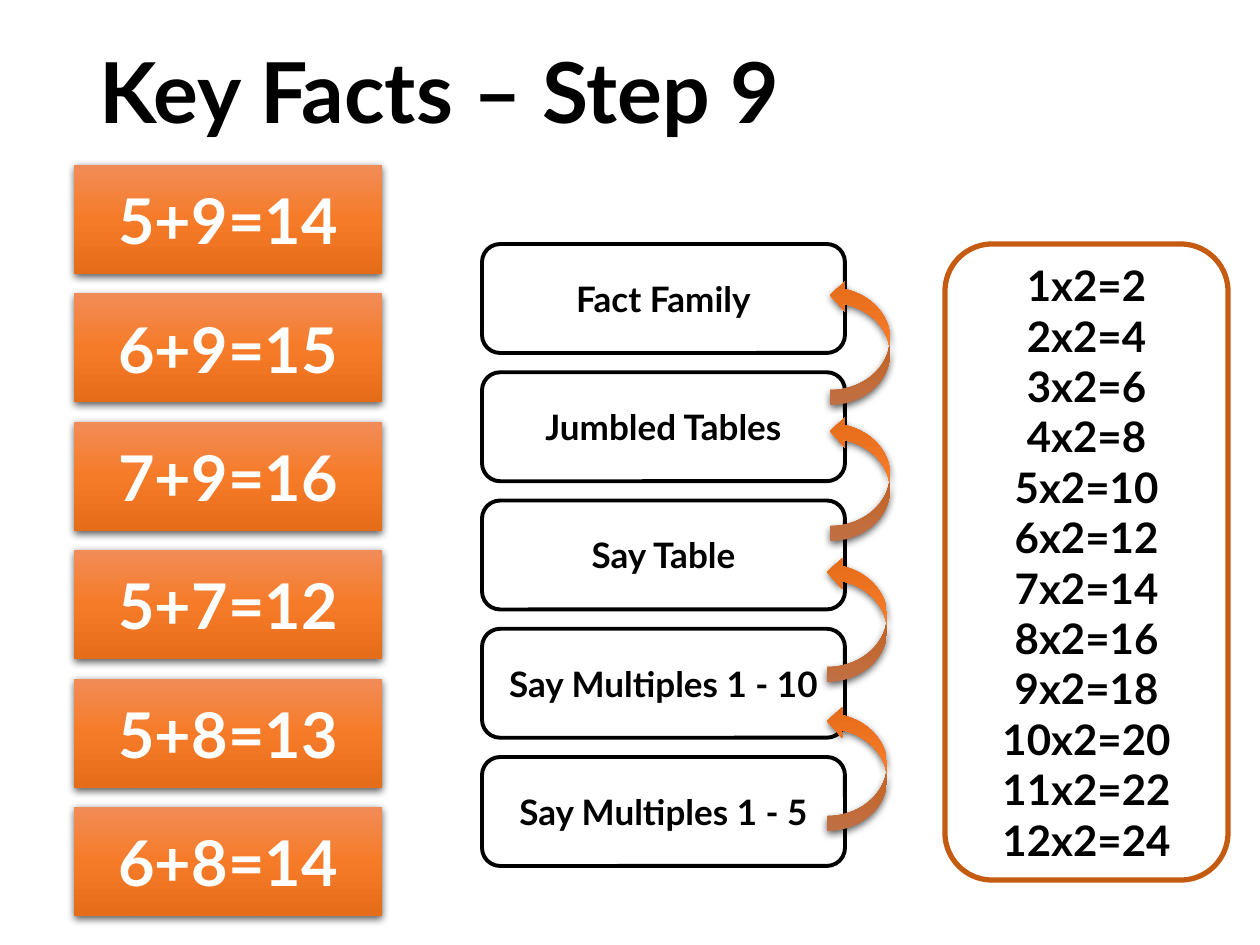
from copy import deepcopy

from lxml.etree import SubElement
from pptx import Presentation
from pptx.dml.color import RGBColor
from pptx.enum.shapes import MSO_SHAPE as Shape
from pptx.enum.text import MSO_ANCHOR as Anchor, PP_ALIGN as Align
from pptx.oxml.ns import qn
from pptx.util import Pt

EMU_PER_PX = 914400 / 126
FONT = "Lato"
BLACK, WHITE, BROWN = "000000", "FFFFFF", "C55A11"
ORANGES = ["F18C57", "F67B28", "E56C19"]
SUMS = ["5+9=14", "6+9=15", "7+9=16", "5+7=12", "5+8=13", "6+8=14"]
STEPS = ["Fact Family", "Jumbled Tables", "Say Table",
         "Say Multiples 1 - 10", "Say Multiples 1 - 5"]
ARROW_OFFSETS = [(348, 36), (348, 172), (345, 313), (345, 462)]
CARD_HEIGHT = 109


def px(length):
    """Turn pixels into EMU."""
    return round(length * EMU_PER_PX)


def color(hex_value):
    """Turn a hex string into a colour."""
    return RGBColor.from_string(hex_value)


def write(shape, lines, size, hex_value, align=Align.CENTER, spacing=1.0):
    """Fill a shape with bold lines, centred vertically."""
    frame = shape.text_frame
    frame.word_wrap = True
    frame.vertical_anchor = Anchor.MIDDLE
    frame.text = "\n".join(lines)
    for paragraph in frame.paragraphs:
        paragraph.alignment = align
        paragraph.line_spacing = spacing
        font = paragraph.font
        font.name, font.size, font.bold = FONT, Pt(size), True
        font.color.rgb = color(hex_value)


def add_shape(slide, kind, box):
    """Add a preset shape without a shadow."""
    shape = slide.shapes.add_shape(kind, *map(px, box))
    shape.shadow.inherit = False
    return shape


def add_outlined(slide, box, line_color, line_width):
    """Add a white rounded box with a coloured outline."""
    shape = add_shape(slide, Shape.ROUNDED_RECTANGLE, box)
    shape.fill.solid()
    shape.fill.fore_color.rgb = color(WHITE)
    shape.line.color.rgb = color(line_color)
    shape.line.width = Pt(line_width)
    return shape


def add_glossy(slide, kind, box):
    """Add an orange gradient shape with a soft shadow below."""
    shape = add_shape(slide, kind, box)
    shape.line.fill.background()
    shape.fill.gradient()
    shape.fill.gradient_angle = 270
    properties = shape._element.spPr
    stop_list = properties.find(qn("a:gradFill")).find(qn("a:gsLst"))
    stop_list.append(deepcopy(stop_list[0]))
    for index, stop in enumerate(shape.fill.gradient_stops):
        stop.position = index / 2
        stop.color.rgb = color(ORANGES[index])
    shadow = SubElement(properties.find(qn("a:effectLst")), qn("a:outerShdw"),
                        blurRad=str(Pt(4.5)), dist=str(Pt(1.5)),
                        dir="5400000", rotWithShape="0")
    shade = SubElement(shadow, qn("a:srgbClr"), val=BLACK)
    SubElement(shade, qn("a:alpha"), val="63000")
    return shape


def stack(box, count):
    """Return equally spaced card boxes that fill a column."""
    left, top, width, height = box
    pitch = (height - CARD_HEIGHT) / (count - 1)
    return [(left, top + index * pitch, width, CARD_HEIGHT)
            for index in range(count)]


def add_title(slide, box):
    """Place the slide heading."""
    title = slide.shapes.add_textbox(*map(px, box))
    write(title, ["Key Facts – Step 9"], 48, BLACK, Align.LEFT, 0.9)


def add_steps(slide, box):
    """Place the learning steps and the arrows that climb them."""
    for step, card in zip(STEPS, stack(box, len(STEPS))):
        write(add_outlined(slide, card, BLACK, 2.25), [step], 20, BLACK)
    for across, down in ARROW_OFFSETS:
        arrow = add_glossy(slide, Shape.CURVED_RIGHT_ARROW,
                           (box[0] + across, box[1] + down, 60, 125))
        arrow.rotation = 180


def add_times_table(slide, box):
    """Place the two times table."""
    lines = [f"{number}x2={number * 2}" for number in range(1, 13)]
    write(add_outlined(slide, box, BROWN, 3), lines, 24, BLACK)


def add_sums(slide, box):
    """Place the column of addition facts."""
    for fact, card in zip(SUMS, stack(box, len(SUMS))):
        write(add_glossy(slide, Shape.RECTANGLE, card), [fact], 36, WHITE)


def main():
    """Build the slide and save it."""
    presentation = Presentation()
    presentation.slide_width, presentation.slide_height = px(1260), px(945)
    slide = presentation.slides.add_slide(presentation.slide_layouts[6])
    add_title(slide, (87, 5, 1086, 183))
    add_steps(slide, (482, 244, 363, 622))
    add_times_table(slide, (945, 244, 283, 636))
    add_sums(slide, (74, 165, 308, 751))
    presentation.save("out.pptx")


if __name__ == "__main__":
    main()
